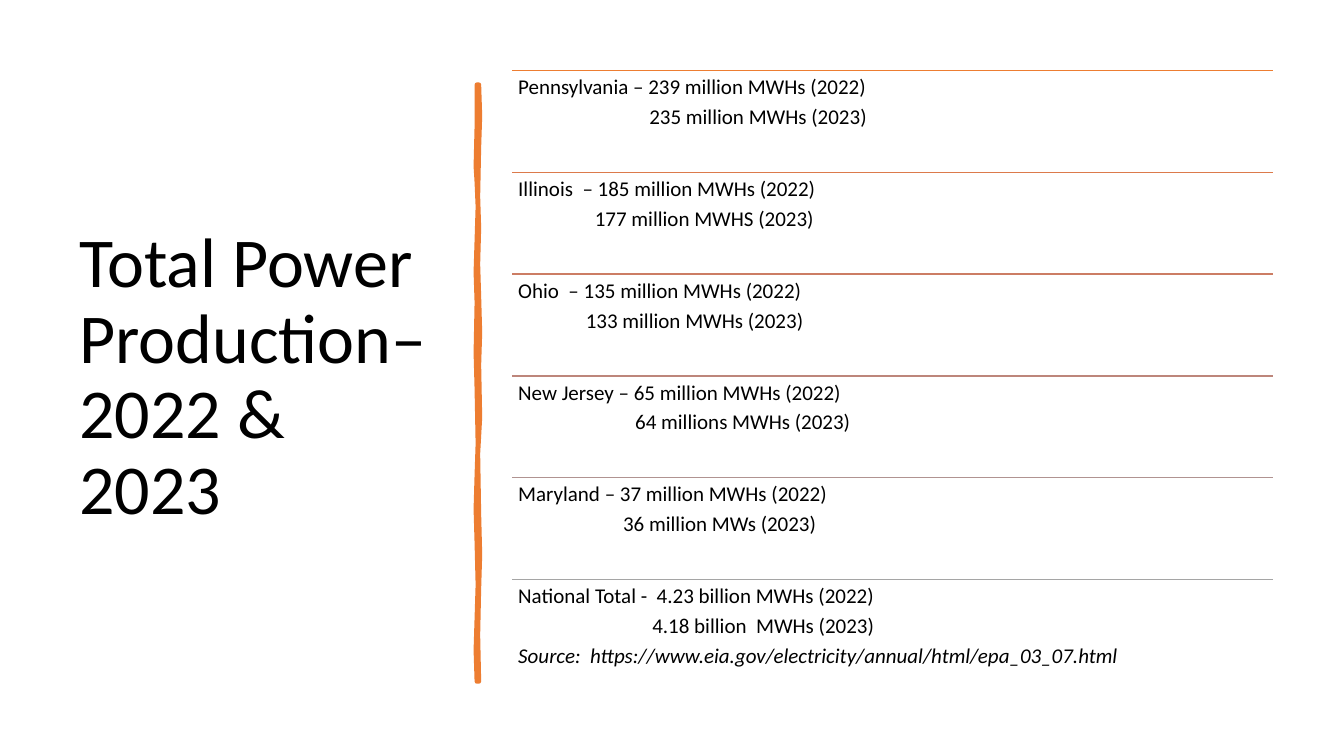
from dataclasses import dataclass

from lxml.etree import SubElement
from pptx import Presentation
from pptx.dml.color import RGBColor
from pptx.enum.shapes import MSO_CONNECTOR as Connector
from pptx.enum.text import MSO_ANCHOR as Anchor
from pptx.oxml.ns import qn
from pptx.util import Pt

PX = 9144
FONT = "Calibri"
BLACK = "000000"
ORANGE = "ED7D31"
LIST_LEFT, LIST_TOP, LIST_WIDTH, ROW_HEIGHT = 508, 70, 755, 101
BAR_RIGHT = [(475, 84), (476, 115), (475, 146), (474, 195), (475, 226),
             (474, 262), (475, 294), (476, 330), (475, 362), (476, 414),
             (474, 450), (475, 510), (476, 550), (475, 584), (474, 630),
             (475, 676)]
BAR_LEFT = [(473, 676), (472, 645), (473, 613), (474, 580), (473, 539),
            (472, 505), (473, 471), (474, 440), (473, 386), (472, 350),
            (473, 300), (472, 270), (473, 238), (474, 205), (473, 181),
            (472, 165), (473, 125), (473, 84)]


@dataclass(frozen=True)
class Producer:
    """A region's output for both years, with an optional source line."""
    first_year: str
    second_year: str
    indent: int
    rule_color: str
    source: str = ""


PRODUCERS = [
    Producer("Pennsylvania – 239 million MWHs (2022)",
             "235 million MWHs (2023)", 130, ORANGE),
    Producer("Illinois  – 185 million MWHs (2022)",
             "177 million MWHS (2023)", 76, "DC7A4B"),
    Producer("Ohio  – 135 million MWHs (2022)",
             "133 million MWHs (2023)", 67, "CC7D64"),
    Producer("New Jersey – 65 million MWHs (2022)",
             "64 millions MWHs (2023)", 116, "BD867B"),
    Producer("Maryland – 37 million MWHs (2022)",
             "36 million MWs (2023)", 104, "B09391"),
    Producer("National Total -  4.23 billion MWHs (2022)",
             "4.18 billion  MWHs (2023)", 133, "A5A5A5",
             "Source:  https://www.eia.gov/electricity/annual/html/epa_03_07.html"),
]


def color(value: str) -> RGBColor:
    """Turn a hex string into a colour."""
    return RGBColor.from_string(value)


def add_text(page, left: int, top: int, width: int, height: int,
             lines: list[str], size: int, margin: int):
    """Add a wrapped text box and return its frame."""
    box = page.shapes.add_textbox(left * PX, top * PX, width * PX, height * PX)
    frame = box.text_frame
    frame.word_wrap = True
    frame.margin_left = frame.margin_right = margin * PX
    frame.margin_top = frame.margin_bottom = 6 * PX
    frame.text = "\n".join(lines)
    for para in frame.paragraphs:
        para.line_spacing = 0.9
        for span in para.runs:
            span.font.name = FONT
            span.font.size = Pt(size)
            span.font.color.rgb = color(BLACK)
    return frame


def add_bar(page) -> None:
    """Draw the wavy vertical divider."""
    start, *rest = BAR_RIGHT + BAR_LEFT
    builder = page.shapes.build_freeform(*start, scale=PX)
    builder.add_line_segments(rest, close=True)
    bar = builder.convert_to_shape()
    bar.shadow.inherit = False
    bar.fill.solid()
    bar.fill.fore_color.rgb = color(ORANGE)
    bar.line.color.rgb = color(ORANGE)
    bar.line.width = Pt(3.25)
    SubElement(bar.line._get_or_add_ln(), qn("a:round"))


def add_producer(page, producer: Producer, top: int) -> None:
    """Draw one ruled row of the list."""
    rule = page.shapes.add_connector(
        Connector.STRAIGHT, LIST_LEFT * PX, top * PX,
        (LIST_LEFT + LIST_WIDTH) * PX, top * PX)
    rule.line.color.rgb = color(producer.rule_color)
    rule.line.width = Pt(1)
    SubElement(rule._element.spPr, qn("a:effectLst"))

    lines = [producer.first_year, producer.second_year]
    if producer.source:
        lines.append(producer.source)
    frame = add_text(page, LIST_LEFT, top, LIST_WIDTH, ROW_HEIGHT, lines, 15, 6)
    for para in frame.paragraphs:
        para.space_after = Pt(5)
    properties = frame.paragraphs[1]._p.get_or_add_pPr()
    properties.set("marL", str(producer.indent * PX))
    if producer.source:
        frame.paragraphs[2].runs[0].font.italic = True


def main() -> None:
    """Build the power production slide."""
    deck = Presentation()
    deck.slide_width, deck.slide_height = 1333 * PX, 750 * PX
    page = deck.slides.add_slide(deck.slide_layouts[6])
    title = add_text(page, 69, 70, 374, 611,
                     ["Total Power Production– 2022 & 2023"], 50, 10)
    title.vertical_anchor = Anchor.MIDDLE
    add_bar(page)
    for row, producer in enumerate(PRODUCERS):
        add_producer(page, producer, LIST_TOP + row * ROW_HEIGHT)
    deck.save("out.pptx")


if __name__ == "__main__":
    main()
